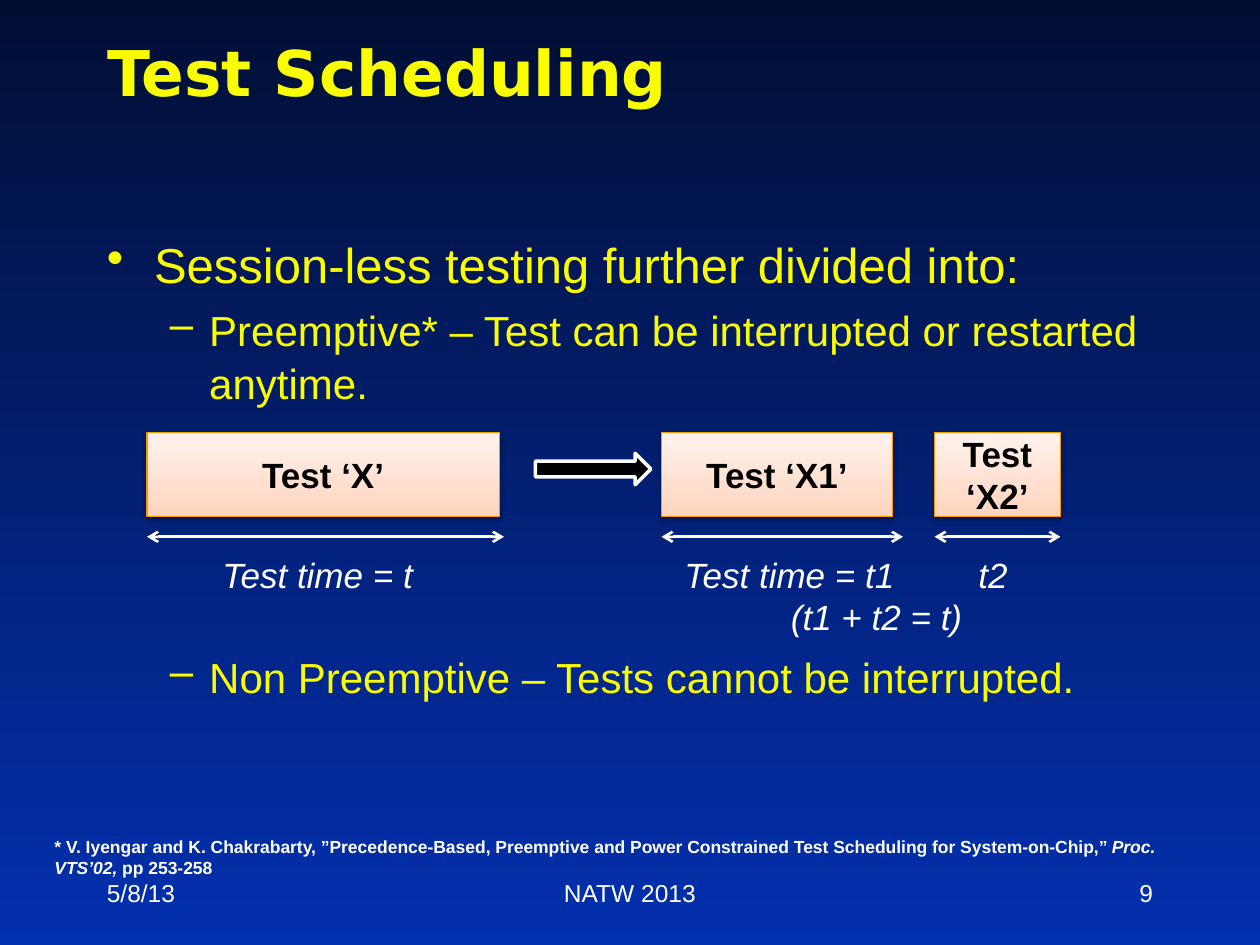
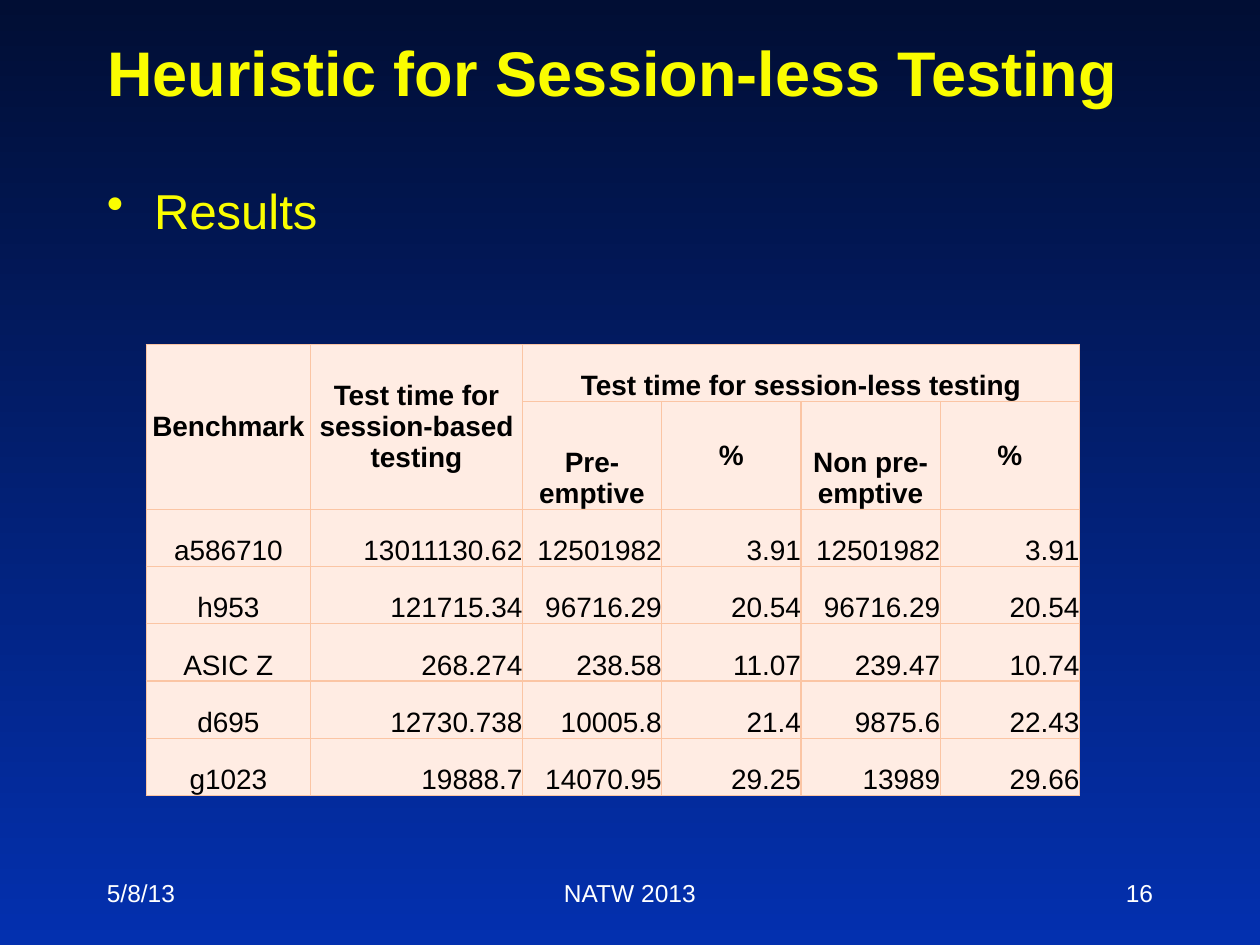
from dataclasses import dataclass
from typing import NamedTuple

from pptx import Presentation
from pptx.dml.color import RGBColor
from pptx.enum.shapes import MSO_CONNECTOR, MSO_SHAPE
from pptx.enum.text import MSO_ANCHOR, MSO_AUTO_SIZE, PP_ALIGN
from pptx.oxml.ns import qn
from pptx.oxml.xmlchemy import OxmlElement
from pptx.util import Pt

LEFT, CENTER, RIGHT = PP_ALIGN.LEFT, PP_ALIGN.CENTER, PP_ALIGN.RIGHT
TOP, MIDDLE, BOTTOM = MSO_ANCHOR.TOP, MSO_ANCHOR.MIDDLE, MSO_ANCHOR.BOTTOM
NO_AUTOSIZE = MSO_AUTO_SIZE.NONE
RECTANGLE, RIGHT_ARROW = MSO_SHAPE.RECTANGLE, MSO_SHAPE.RIGHT_ARROW
STRAIGHT = MSO_CONNECTOR.STRAIGHT
TITLE_ONLY = 5


@dataclass(frozen=True)
class Theme:
    font: str = "Arial"
    wide_font: str = "DejaVu Sans"
    yellow: str = "FAFD00"
    white: str = "FFFFFF"
    black: str = "000000"
    night: str = "010E34"
    blue: str = "0330AF"
    peach: str = "FFD4BD"
    pale_peach: str = "FFF3EE"
    orange: str = "F99600"
    cell: str = "FFECE3"
    cell_border: str = "FBC5A4"
    title_size: float = 36
    label_size: float = 20
    table_size: float = 16
    footer_size: float = 14
    note_size: float = 10


THEME = Theme()


class Frame(NamedTuple):
    left: float
    top: float
    width: float
    height: float

    def lengths(self) -> list:
        return [Pt(value) for value in self]


class Style(NamedTuple):
    size: float
    color: str = THEME.white
    bold: bool = False
    italic: bool = False
    font: str = THEME.font


class Level(NamedTuple):
    bullet: str
    size: float
    margin: float
    hanging: float
    line_spacing: float


class Bullet(NamedTuple):
    text: str
    level: Level
    space_before: float = 0


class TestBlock(NamedTuple):
    text: str
    left: float
    width: float
    arrow_width: float


class Label(NamedTuple):
    text: str
    frame: Frame
    align: PP_ALIGN = LEFT


MAIN = Level("•", 28, 27, 27, 1)
SUB = Level("–", 24, 58.5, 22.5, 1.05)
LABEL = Style(THEME.label_size, italic=True)
BLOCK_TEXT = Style(THEME.label_size, THEME.black, bold=True)
FOOTER = Style(THEME.footer_size)
NOTE = Style(THEME.note_size, bold=True)

TITLE_FRAME = Frame(54, 18, 612, 48)
FOOTER_TOP, FOOTER_HEIGHT = 492, 36
BLOCK_TOP, BLOCK_HEIGHT, TIME_ARROW_Y = 247, 48, 306.75
LABEL_TOP, LABEL_HEIGHT = 313, 31.5

BULLETS = [
    Bullet("Session-less testing further divided into:", MAIN),
    Bullet("Preemptive* – Test can be interrupted or restarted anytime.", SUB, 4.8),
    Bullet("Non Preemptive – Tests cannot be interrupted.", SUB, 138),
]
BLOCKS = [
    TestBlock("Test ‘X’", 84, 201.5, 204),
    TestBlock("Test ‘X1’", 378, 132, 138),
    TestBlock("Test ‘X2’", 534, 72, 72),
]
LABELS = [
    Label("Test time = t", Frame(120, LABEL_TOP, 126, LABEL_HEIGHT)),
    Label("Test time = t1", Frame(384, LABEL_TOP, 142, LABEL_HEIGHT)),
    Label("t2", Frame(552, LABEL_TOP, 36, LABEL_HEIGHT)),
    Label("(t1 + t2 = t)", Frame(390, LABEL_TOP + 24, 222, LABEL_HEIGHT), CENTER),
]
CITATION = [
    ("* V. Iyengar and K. Chakrabarty, ”Precedence-Based, Preemptive and Power "
     "Constrained Test Scheduling for System-on-Chip,” ", False),
    ("Proc. VTS’02, ", True),
    ("pp 253-258", False),
]

TABLE_LEFT, TABLE_TOP = 83.5, 196.75
COLUMN_WIDTHS = [94, 121] + [79.6] * 4
ROW_HEIGHTS = [32.7, 61.7] + [32.7] * 5
HEADER_ROWS = 2
MERGES = [((0, 0), (1, 0)), ((0, 1), (1, 1)), ((0, 2), (0, 5))]
RESULTS = [
    ["Benchmark", "Test time for session-based testing",
     "Test time for session-less testing", "", "", ""],
    ["", "", "Pre-emptive", "%", "Non pre-emptive", "%"],
    ["a586710", "13011130.62", "12501982", "3.91", "12501982", "3.91"],
    ["h953", "121715.34", "96716.29", "20.54", "96716.29", "20.54"],
    ["ASIC Z", "268.274", "238.58", "11.07", "239.47", "10.74"],
    ["d695", "12730.738", "10005.8", "21.4", "9875.6", "22.43"],
    ["g1023", "19888.7", "14070.95", "29.25", "13989", "29.66"],
]


def rgb(color: str) -> RGBColor:
    return RGBColor.from_string(color)


def add_xml(parent, tag: str, **attributes):
    """Append a DrawingML child element and return it."""
    child = OxmlElement(tag)
    for name, value in attributes.items():
        child.set(name, str(value))
    parent.append(child)
    return child


def add_solid_fill(parent, color: str):
    return add_xml(add_xml(parent, "a:solidFill"), "a:srgbClr", val=color)


def fill_gradient(fill, start: str, end: str, angle: float) -> None:
    fill.gradient()
    fill.gradient_angle = angle
    for stop, color in zip(fill.gradient_stops, (start, end)):
        stop.color.rgb = rgb(color)


def format_paragraph(para, style: Style, align: PP_ALIGN = LEFT) -> None:
    para.alignment = align
    font = para.font
    font.name, font.size = style.font, Pt(style.size)
    font.bold, font.italic = style.bold, style.italic
    font.color.rgb = rgb(style.color)


def add_text(page, frame: Frame, text: str, style: Style,
             align: PP_ALIGN = LEFT, anchor: MSO_ANCHOR = TOP):
    box = page.shapes.add_textbox(*frame.lengths())
    box.text_frame.word_wrap = True
    box.text_frame.vertical_anchor = anchor
    para = box.text_frame.paragraphs[0]
    para.text = text
    format_paragraph(para, style, align)
    return box


def add_page(deck, title: str, number: int, title_font: str = THEME.font):
    """Add a slide with the shared title style and footer."""
    page = deck.slides.add_slide(deck.slide_layouts[TITLE_ONLY])
    heading = page.shapes.title
    heading.left, heading.top, heading.width, heading.height = TITLE_FRAME.lengths()
    heading.text_frame.text = title
    heading.text_frame.auto_size = NO_AUTOSIZE
    heading.text_frame.vertical_anchor = BOTTOM
    format_paragraph(heading.text_frame.paragraphs[0],
                     Style(THEME.title_size, THEME.yellow, bold=True, font=title_font))
    for text, left, width, align in (("5/8/13", 54, 150, LEFT),
                                     ("NATW 2013", 246, 228, CENTER),
                                     (str(number), 516, 150, RIGHT)):
        add_text(page, Frame(left, FOOTER_TOP, width, FOOTER_HEIGHT),
                 text, FOOTER, align, MIDDLE)
    return page


def add_bullets(page, frame: Frame, bullets: list[Bullet]) -> None:
    box = page.shapes.add_textbox(*frame.lengths())
    box.text_frame.word_wrap = True
    for index, bullet in enumerate(bullets):
        paragraphs = box.text_frame
        para = paragraphs.add_paragraph() if index else paragraphs.paragraphs[0]
        level = bullet.level
        para.text = bullet.text
        format_paragraph(para, Style(level.size, THEME.yellow))
        para.line_spacing = level.line_spacing
        para.space_before = Pt(bullet.space_before)
        properties = para._p.get_or_add_pPr()
        properties.set("marL", str(Pt(level.margin)))
        properties.set("indent", str(-Pt(level.hanging)))
        mark = OxmlElement("a:buChar")
        mark.set("char", level.bullet)
        properties.insert_element_before(mark, "a:tabLst", "a:defRPr", "a:extLst")


def add_test_block(page, block: TestBlock) -> None:
    frame = Frame(block.left, BLOCK_TOP, block.width, BLOCK_HEIGHT)
    shape = page.shapes.add_shape(RECTANGLE, *frame.lengths())
    fill_gradient(shape.fill, THEME.peach, THEME.pale_peach, 90)
    shape.line.color.rgb = rgb(THEME.orange)
    shape.line.width = Pt(0.75)
    shape.shadow.inherit = False
    effects = shape._element.spPr.find(qn("a:effectLst"))
    shadow = add_xml(effects, "a:outerShdw", blurRad=Pt(3.1), dist=Pt(1.6),
                     dir=5400000, rotWithShape=0)
    add_xml(add_xml(shadow, "a:srgbClr", val=THEME.black), "a:alpha", val=38000)
    shape.text_frame.vertical_anchor = MIDDLE
    shape.text_frame.text = block.text
    format_paragraph(shape.text_frame.paragraphs[0], BLOCK_TEXT, CENTER)


def add_time_arrow(page, left: float, width: float) -> None:
    arrow = page.shapes.add_connector(STRAIGHT, Pt(left), Pt(TIME_ARROW_Y),
                                      Pt(left + width), Pt(TIME_ARROW_Y))
    arrow.line.color.rgb = rgb(THEME.white)
    arrow.line.width = Pt(1.5)
    properties = arrow._element.spPr
    outline = properties.find(qn("a:ln"))
    for end in ("a:headEnd", "a:tailEnd"):
        add_xml(outline, end, type="arrow")
    add_xml(properties, "a:effectLst")


def add_split_arrow(page) -> None:
    arrow = page.shapes.add_shape(RIGHT_ARROW, *Frame(306, 259, 66, 18).lengths())
    arrow.fill.solid()
    arrow.fill.fore_color.rgb = rgb(THEME.black)
    arrow.line.color.rgb = rgb(THEME.white)
    arrow.line.width = Pt(2)
    arrow.shadow.inherit = False


def add_citation(page) -> None:
    box = add_text(page, Frame(24, 474, 672, 31.5), "", NOTE)
    para = box.text_frame.paragraphs[0]
    for text, italic in CITATION:
        span = para.add_run()
        span.text = text
        span.font.italic = italic


def format_cell(cell, text: str, align: PP_ALIGN, anchor: MSO_ANCHOR, bold: bool) -> None:
    cell.margin_left = cell.margin_right = cell.margin_top = cell.margin_bottom = Pt(0)
    cell.vertical_anchor = anchor
    cell.text = text
    format_paragraph(cell.text_frame.paragraphs[0],
                     Style(THEME.table_size, THEME.black, bold), align)
    properties = cell._tc.get_or_add_tcPr()
    for side in ("a:lnL", "a:lnR", "a:lnT", "a:lnB"):
        add_solid_fill(add_xml(properties, side, w=Pt(0.75)), THEME.cell_border)
    cell.fill.solid()
    cell.fill.fore_color.rgb = rgb(THEME.cell)


def add_results_table(page) -> None:
    frame = Frame(TABLE_LEFT, TABLE_TOP, sum(COLUMN_WIDTHS), sum(ROW_HEIGHTS))
    table = page.shapes.add_table(len(ROW_HEIGHTS), len(COLUMN_WIDTHS),
                                  *frame.lengths()).table
    for column, width in zip(table.columns, COLUMN_WIDTHS):
        column.width = Pt(width)
    for row, height in zip(table.rows, ROW_HEIGHTS):
        row.height = Pt(height)
    for row_index, values in enumerate(RESULTS):
        header = row_index < HEADER_ROWS
        for column_index, text in enumerate(values):
            align = CENTER if header or column_index == 0 else RIGHT
            centred = header and (column_index < 2 or text == "%")
            format_cell(table.cell(row_index, column_index), text, align,
                        MIDDLE if centred else BOTTOM, header)
    for first, last in MERGES:
        table.cell(*first).merge(table.cell(*last))


def build_scheduling_page(deck) -> None:
    page = add_page(deck, "Test Scheduling", 9, THEME.wide_font)
    add_bullets(page, Frame(54, 130.5, 612, 280), BULLETS)
    add_citation(page)
    for block in BLOCKS:
        add_test_block(page, block)
        add_time_arrow(page, block.left, block.arrow_width)
    add_split_arrow(page)
    for label in LABELS:
        add_text(page, label.frame, label.text, LABEL, label.align)


def build_results_page(deck) -> None:
    page = add_page(deck, "Heuristic for Session-less Testing", 16)
    add_bullets(page, Frame(54, 99.5, 198, 40), [Bullet("Results", MAIN)])
    add_results_table(page)


def main() -> None:
    deck = Presentation()
    deck.slide_width, deck.slide_height = Pt(720), Pt(540)
    fill_gradient(deck.slide_master.background.fill, THEME.night, THEME.blue, 270)
    build_scheduling_page(deck)
    build_results_page(deck)
    deck.save("out.pptx")


if __name__ == "__main__":
    main()
